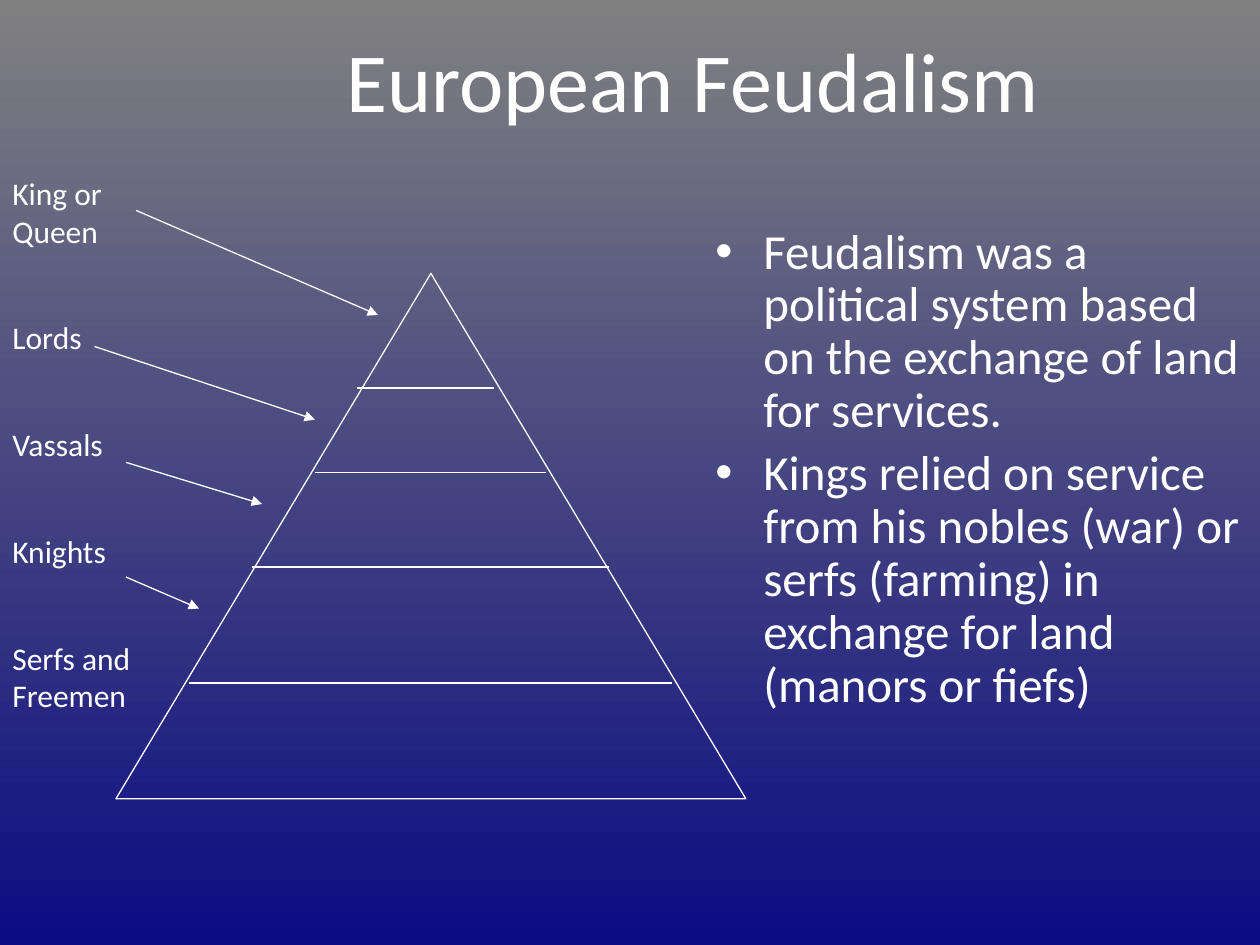
from dataclasses import dataclass

from lxml import etree
from pptx import Presentation
from pptx.dml.color import RGBColor
from pptx.enum.shapes import MSO_CONNECTOR, MSO_SHAPE
from pptx.enum.text import MSO_ANCHOR, PP_ALIGN
from pptx.oxml.ns import qn
from pptx.util import Inches, Pt

STRAIGHT = MSO_CONNECTOR.STRAIGHT
TRIANGLE = MSO_SHAPE.ISOSCELES_TRIANGLE
MIDDLE = MSO_ANCHOR.MIDDLE
TOP = MSO_ANCHOR.TOP
CENTER = PP_ALIGN.CENTER
LEFT = PP_ALIGN.LEFT

COLORS = {"white": "FFFFFF", "sky": "808080", "navy": "0C0C82"}
FONT = "Calibri"
LINE_WIDTH = Pt(0.75)
BULLET_INDENT = Inches(0.38)


@dataclass(frozen=True)
class TextBlock:
    left: float
    top: float
    width: float
    height: float
    lines: tuple[str, ...]
    size: int
    space_before: float = 0
    line_spacing: float = 1.0
    alignment: PP_ALIGN = LEFT
    anchor: MSO_ANCHOR = TOP
    bulleted: bool = False


@dataclass(frozen=True)
class Segment:
    start_x: float
    start_y: float
    end_x: float
    end_y: float
    arrow: bool = False


TEXT_BLOCKS = (
    TextBlock(1, 0, 9, 1.25, ("European Feudalism",), 48,
              alignment=CENTER, anchor=MIDDLE),
    TextBlock(5.58, 1.75, 4.42, 4.95, (
        "Feudalism was a political system based on the exchange of land for services.",
        "Kings relied on service from his nobles (war) or serfs (farming) in exchange "
        "for land (manors or fiefs)",
    ), 28, space_before=5.6, line_spacing=0.9, bulleted=True),
    TextBlock(0, 1.33, 1.42, 4.95, (
        "King or Queen", "Lords", "Vassals", "Knights", "Serfs and Freemen",
    ), 18, space_before=39.4),
)

TIER_DIVIDERS = (
    Segment(2.83, 3.08, 3.92, 3.08),
    Segment(2.5, 3.75, 4.33, 3.75),
    Segment(2, 4.5, 4.83, 4.5),
    Segment(1.5, 5.42, 5.33, 5.42),
)

LABEL_ARROWS = (
    Segment(1.08, 1.67, 3, 2.5, arrow=True),
    Segment(0.75, 2.75, 2.5, 3.33, arrow=True),
    Segment(1, 3.67, 2.08, 4, arrow=True),
    Segment(1, 4.58, 1.58, 4.83, arrow=True),
)


def color(name: str) -> RGBColor:
    """Return the named colour."""
    return RGBColor.from_string(COLORS[name])


def paint_background(slide) -> None:
    """Fill the slide with a vertical gradient."""
    fill = slide.background.fill
    fill.gradient()
    fill.gradient_angle = 270
    for stop, position, name in zip(fill.gradient_stops, (0, 1), ("sky", "navy")):
        stop.color.rgb = color(name)
        stop.position = position


def add_bullet(paragraph) -> None:
    """Give the paragraph a hanging round bullet."""
    properties = paragraph._p.get_or_add_pPr()
    properties.set("marL", str(BULLET_INDENT))
    properties.set("indent", str(-BULLET_INDENT))
    etree.SubElement(properties, qn("a:buFont")).set("typeface", "Arial")
    etree.SubElement(properties, qn("a:buChar")).set("char", "•")


def draw_text(slide, block: TextBlock) -> None:
    """Draw a wrapped block of paragraphs."""
    shape = slide.shapes.add_textbox(
        Inches(block.left), Inches(block.top), Inches(block.width), Inches(block.height))
    text_frame = shape.text_frame
    text_frame.word_wrap = True
    text_frame.vertical_anchor = block.anchor
    text_frame.text = "\n".join(block.lines)
    for index, paragraph in enumerate(text_frame.paragraphs):
        paragraph.alignment = block.alignment
        paragraph.line_spacing = block.line_spacing
        paragraph.space_before = Pt(block.space_before if index else 0)
        if block.bulleted:
            add_bullet(paragraph)
        for run in paragraph.runs:
            run.font.name = FONT
            run.font.size = Pt(block.size)
            run.font.color.rgb = color("white")


def draw_segment(slide, segment: Segment) -> None:
    """Draw a straight line with an optional arrowhead."""
    connector = slide.shapes.add_connector(
        STRAIGHT, Inches(segment.start_x), Inches(segment.start_y),
        Inches(segment.end_x), Inches(segment.end_y))
    connector.line.color.rgb = color("white")
    connector.line.width = LINE_WIDTH
    properties = connector._element.spPr
    if segment.arrow:
        outline = properties.find(qn("a:ln"))
        etree.SubElement(outline, qn("a:tailEnd")).set("type", "triangle")
    etree.SubElement(properties, qn("a:effectLst"))


def draw_pyramid(slide) -> None:
    """Draw the outline of the social pyramid."""
    pyramid = slide.shapes.add_shape(
        TRIANGLE, Inches(0.92), Inches(2.17), Inches(5), Inches(4.17))
    pyramid.shadow.inherit = False
    pyramid.fill.background()
    pyramid.line.color.rgb = color("white")
    pyramid.line.width = LINE_WIDTH


def main() -> None:
    """Build and save the slide."""
    presentation = Presentation()
    presentation.slide_width = Inches(10)
    presentation.slide_height = Inches(7.5)
    slide = presentation.slides.add_slide(presentation.slide_layouts[6])
    paint_background(slide)
    for block in TEXT_BLOCKS:
        draw_text(slide, block)
    draw_pyramid(slide)
    for segment in TIER_DIVIDERS + LABEL_ARROWS:
        draw_segment(slide, segment)
    presentation.save("out.pptx")


if __name__ == "__main__":
    main()
